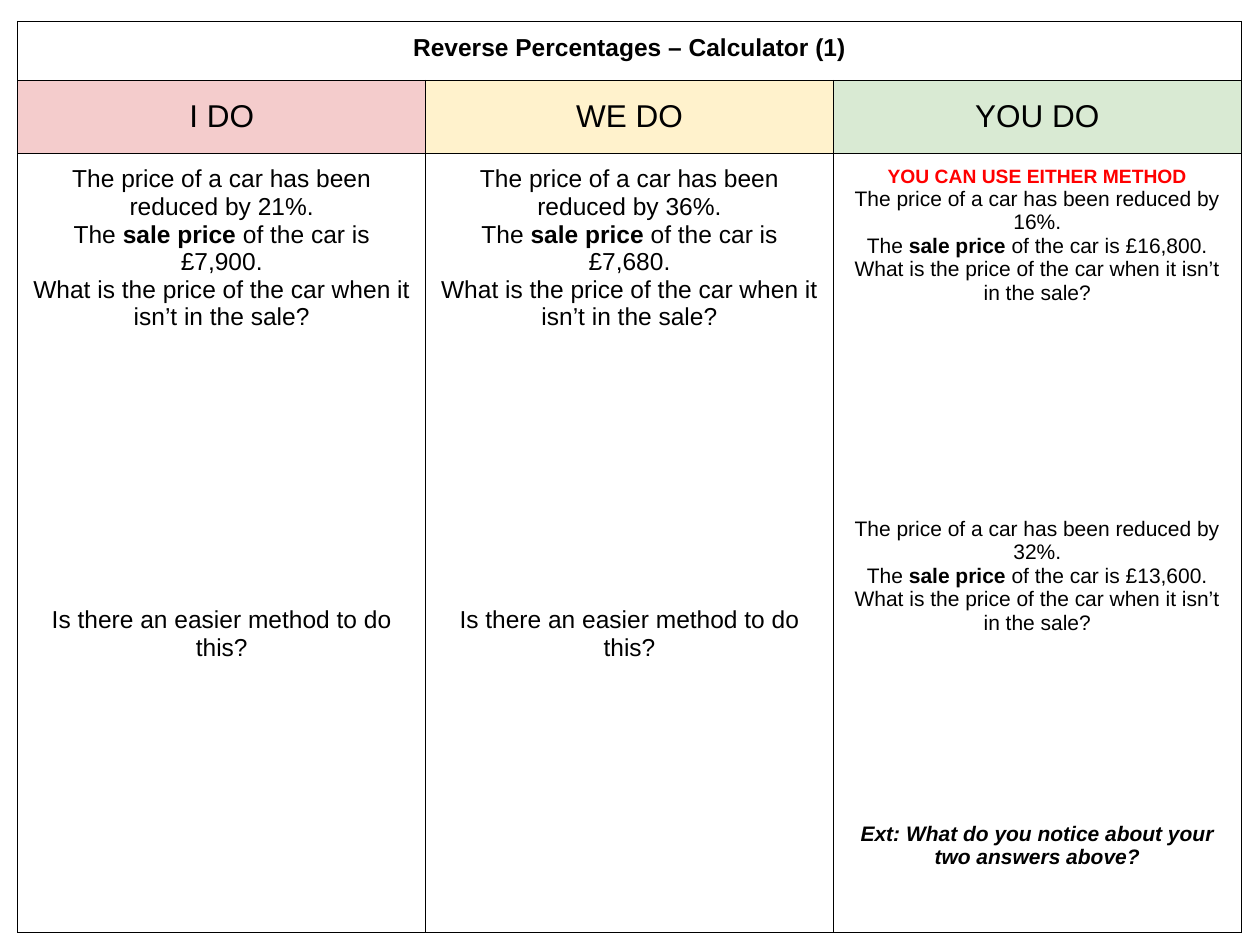
import dataclasses
import typing

import lxml.etree
import pptx
import pptx.dml.color
import pptx.enum.text
import pptx.oxml.ns
import pptx.util

Cm = pptx.util.Cm
Pt = pptx.util.Pt

BLACK = "000000"
COLUMN_WIDTH = 8.22
ROW_HEIGHTS = (1.19, 1.47, 15.7)
CELL_MARGIN = 0.25
BORDER_WIDTH = 0.75


@dataclasses.dataclass
class Span:
    text: str
    bold: bool = False
    italic: bool = False
    color: str = BLACK


@dataclasses.dataclass
class Line:
    spans: list[Span]
    size: float
    space_before: float = 0


@dataclasses.dataclass
class Column:
    heading: str
    fill: str
    lines: list[Line]


def rgb(color: str) -> pptx.dml.color.RGBColor:
    return pptx.dml.color.RGBColor.from_string(color)


def question(percent: int, sale_price: str, size: float, space_before: float = 0) -> list[Line]:
    return [
        Line([Span(f"The price of a car has been reduced by {percent}%.")], size, space_before),
        Line([Span("The "), Span("sale price", bold=True),
              Span(f" of the car is {sale_price}.")], size),
        Line([Span("What is the price of the car when it isn’t in the sale?")], size),
    ]


def easier_method() -> Line:
    return Line([Span("Is there an easier method to do this?")], 14, 157.5)


def set_borders(cell: typing.Any) -> None:
    """Draw all four sides; the lines must come before the fill in the cell properties."""
    properties = cell._tc.get_or_add_tcPr()
    qn = pptx.oxml.ns.qn
    for index, side in enumerate(("a:lnL", "a:lnR", "a:lnT", "a:lnB")):
        border = lxml.etree.Element(qn(side), w=str(Pt(BORDER_WIDTH)))
        fill = lxml.etree.SubElement(border, qn("a:solidFill"))
        lxml.etree.SubElement(fill, qn("a:srgbClr"), val=BLACK)
        properties.insert(index, border)


def fill_cell(cell: typing.Any, lines: list[Line], fill: str | None = None,
              middle: bool = False) -> None:
    cell.margin_left = cell.margin_right = Cm(CELL_MARGIN)
    cell.margin_top = cell.margin_bottom = Cm(CELL_MARGIN)
    anchor = pptx.enum.text.MSO_ANCHOR
    cell.vertical_anchor = anchor.MIDDLE if middle else anchor.TOP
    if fill:
        cell.fill.solid()
        cell.fill.fore_color.rgb = rgb(fill)
    else:
        cell.fill.background()
    for index, line in enumerate(lines):
        frame = cell.text_frame
        para = frame.add_paragraph() if index else frame.paragraphs[0]
        para.alignment = pptx.enum.text.PP_ALIGN.CENTER
        para.space_before = Pt(line.space_before)
        for span in line.spans:
            run = para.add_run()
            run.text = span.text
            run.font.name = "Arial"
            run.font.size = Pt(line.size)
            run.font.bold = span.bold
            run.font.italic = span.italic
            run.font.color.rgb = rgb(span.color)


COLUMNS = [
    Column("I DO", "F4CCCC", question(21, "£7,900", 14) + [easier_method()]),
    Column("WE DO", "FFF2CC", question(36, "£7,680", 14) + [easier_method()]),
    Column("YOU DO", "D9EAD3", [
        Line([Span("YOU CAN USE EITHER METHOD", bold=True, color="FF0000")], 11),
        *question(16, "£16,800", 12),
        *question(32, "£13,600", 12, space_before=121.5),
        Line([Span("Ext: What do you notice about your two answers above?",
                   bold=True, italic=True)], 12, 107),
    ]),
]


def main() -> None:
    deck = pptx.Presentation()
    deck.slide_width, deck.slide_height = Cm(25.4), Cm(19.05)
    page = deck.slides.add_slide(deck.slide_layouts[6])

    table = page.shapes.add_table(
        len(ROW_HEIGHTS), len(COLUMNS), Cm(0.36), Cm(0.43),
        Cm(COLUMN_WIDTH * len(COLUMNS)), Cm(sum(ROW_HEIGHTS))).table
    table.first_row = table.horz_banding = False
    for row, height in zip(table.rows, ROW_HEIGHTS):
        row.height = Cm(height)

    title = table.cell(0, 0)
    title.merge(table.cell(0, len(COLUMNS) - 1))
    fill_cell(title, [Line([Span("Reverse Percentages – Calculator (1)", bold=True)], 14)])
    for index, column in enumerate(COLUMNS):
        table.columns[index].width = Cm(COLUMN_WIDTH)
        heading = [Line([Span(column.heading)], 18)]
        fill_cell(table.cell(1, index), heading, column.fill, middle=True)
        fill_cell(table.cell(2, index), column.lines)
    for cell in table.iter_cells():
        set_borders(cell)

    deck.save("out.pptx")


if __name__ == "__main__":
    main()
